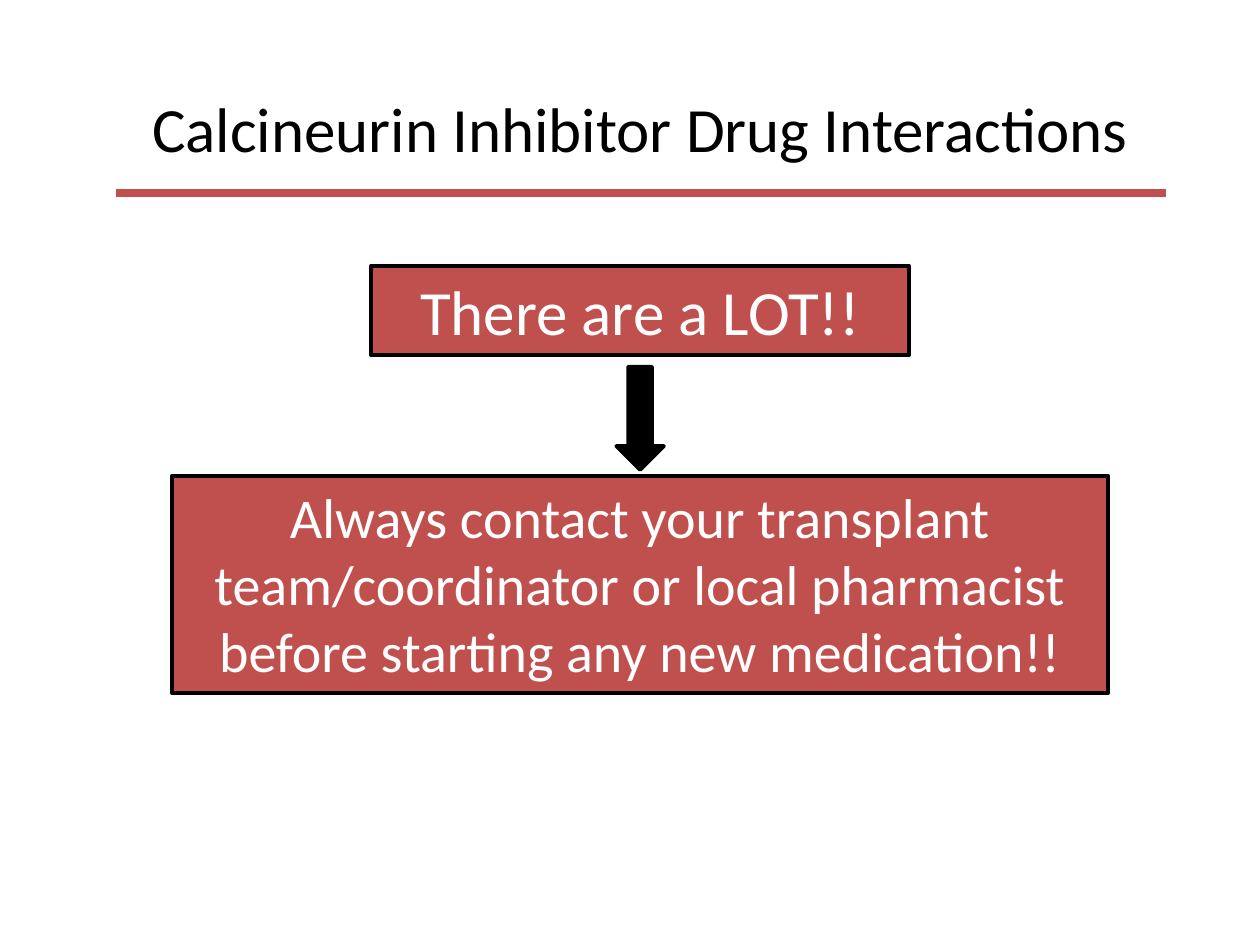
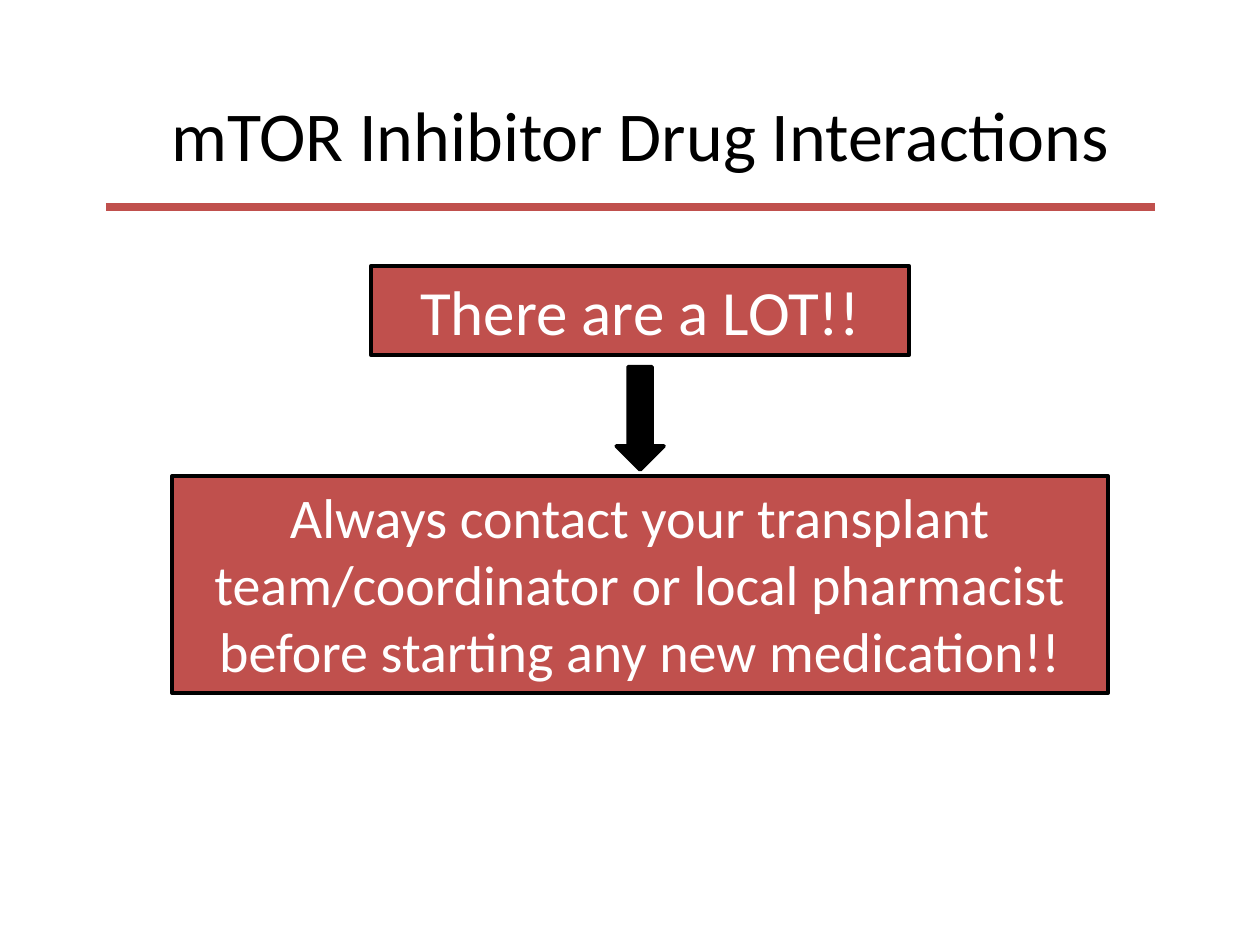
import pptx
import pptx.util
import pptx.dml.color
import pptx.enum.shapes
import pptx.enum.text
from lxml import etree

Inches = pptx.util.Inches
SHAPES = pptx.enum.shapes.MSO_SHAPE

COLOURS = {"red": "C0504D", "black": "000000", "white": "FFFFFF"}
FONT = "Calibri"

SLIDES = [
    {"title": "Calcineurin Inhibitor Drug Interactions", "size": 36,
     "title_top": 0.66, "rule_left": 0.92, "rule_top": 1.53},
    {"title": "mTOR Inhibitor Drug Interactions", "size": 40,
     "title_top": 0.71, "rule_left": 0.84, "rule_top": 1.64},
]
# text, font size, top, width, height
MESSAGES = [
    ("There are a LOT!!", 36, 2.11, 4.27, 0.71),
    ("Always contact your transplant team/coordinator or local pharmacist "
     "before starting any new medication!!", 32, 3.78, 7.43, 1.72),
]
CENTRE = 5.08
TITLE_WIDTH, TITLE_HEIGHT = 8.25, 0.7
RULE_WIDTH = 8.33
ARROW_TOP, ARROW_WIDTH, ARROW_HEIGHT = 2.91, 0.38, 0.82


def colour(name):
    return pptx.dml.color.RGBColor.from_string(COLOURS[name])


def centred(top, width, height):
    return [Inches(value) for value in (CENTRE - width / 2, top, width, height)]


def write(shape, text, size, ink, anchor, margin_x=0.1, margin_y=0.05):
    frame = shape.text_frame
    frame.word_wrap = True
    frame.vertical_anchor = anchor
    frame.margin_left = frame.margin_right = Inches(margin_x)
    frame.margin_top = frame.margin_bottom = Inches(margin_y)
    para = frame.paragraphs[0]
    para.alignment = pptx.enum.text.PP_ALIGN.CENTER
    span = para.add_run()
    span.text = text
    span.font.name = FONT
    span.font.size = pptx.util.Pt(size)
    span.font.color.rgb = colour(ink)


def add_outlined(page, kind, place, fill, line_width):
    shape = page.shapes.add_shape(kind, *place)
    shape.shadow.inherit = False
    shape.fill.solid()
    shape.fill.fore_color.rgb = colour(fill)
    shape.line.color.rgb = colour("black")
    shape.line.width = pptx.util.Pt(line_width)
    return shape


def add_heading(page, title, size, title_top, rule_left, rule_top):
    box = page.shapes.add_textbox(*centred(title_top, TITLE_WIDTH, TITLE_HEIGHT))
    write(box, title, size, "black", pptx.enum.text.MSO_ANCHOR.MIDDLE, margin_y=0.1)
    rule = page.shapes.add_connector(
        pptx.enum.shapes.MSO_CONNECTOR.STRAIGHT, Inches(rule_left), Inches(rule_top),
        Inches(rule_left + RULE_WIDTH), Inches(rule_top))
    rule.line.color.rgb = colour("red")
    rule.line.width = pptx.util.Pt(4.5)
    etree.SubElement(rule._element.spPr, pptx.oxml.ns.qn("a:effectLst"))


def add_warning(page):
    for text, size, top, width, height in MESSAGES:
        box = add_outlined(page, SHAPES.RECTANGLE, centred(top, width, height), "red", 2.25)
        write(box, text, size, "white", pptx.enum.text.MSO_ANCHOR.TOP)
        box.text_frame.auto_size = pptx.enum.text.MSO_AUTO_SIZE.SHAPE_TO_FIT_TEXT
    add_outlined(page, SHAPES.DOWN_ARROW,
                 centred(ARROW_TOP, ARROW_WIDTH, ARROW_HEIGHT), "black", 2)


def main():
    deck = pptx.Presentation()
    deck.slide_width, deck.slide_height = Inches(10), Inches(7.5)
    for heading in SLIDES:
        page = deck.slides.add_slide(deck.slide_layouts[6])
        add_heading(page, **heading)
        add_warning(page)
    deck.save("out.pptx")


if __name__ == "__main__":
    main()
